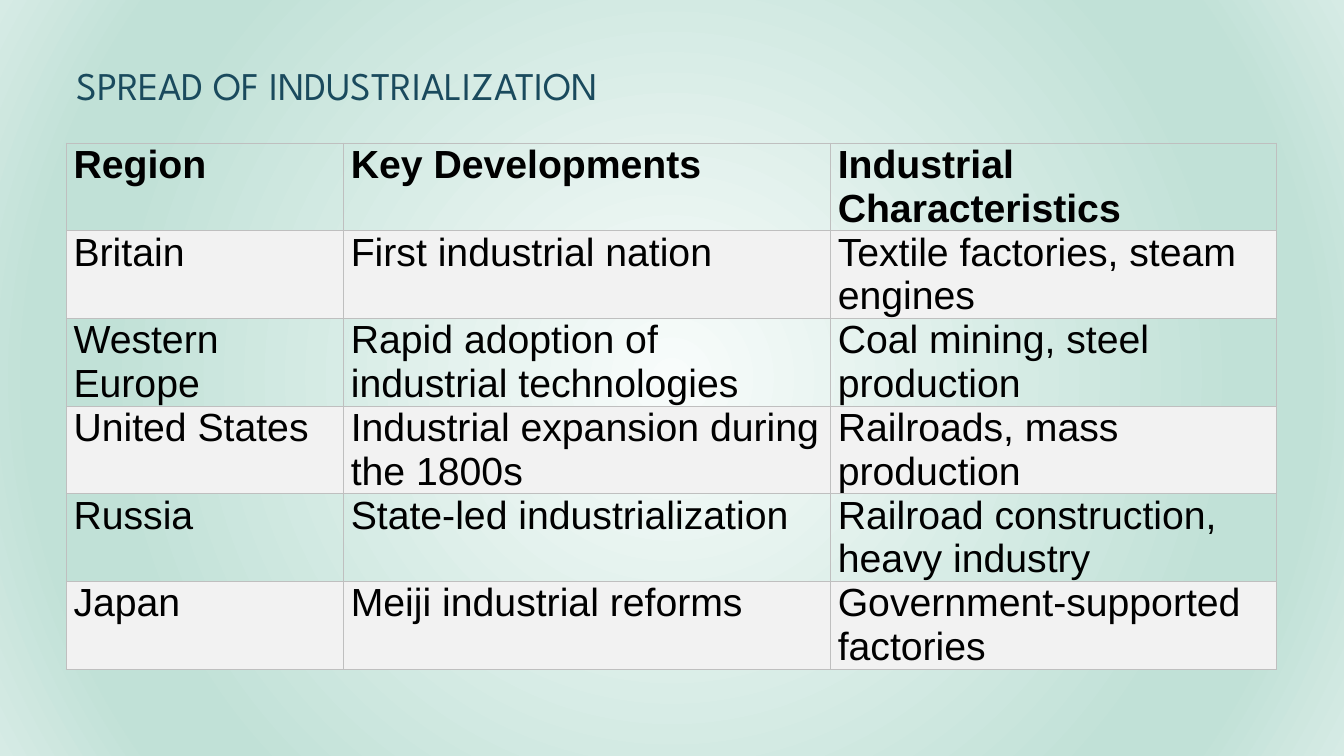
"""Build a slide with a table on the spread of industrialization."""
from pptx import Presentation
from pptx.dml.color import RGBColor
from pptx.enum.text import MSO_ANCHOR, PP_ALIGN
from pptx.oxml import parse_xml
from pptx.oxml.ns import nsdecls, qn
from pptx.util import Inches, Pt

THEME = {
    "title": "1A4A5D", "ink": "000000", "band": "F2F2F2", "rule": "BFBFBF",
    "glow": [(0, "F8FCFB"), (74, "C1E1D7"), (83, "C1E1D7"), (100, "D6EBE5")],
    "title_font": "League Spartan", "body_font": "Arial", "size": 28,
}
LEFT, TABLE_TOP, ROW_HEIGHT = 0.66, 1.42, 0.87
COLUMNS = [2.75, 4.83, 4.42]
REGIONS = [
    ("Region", "Key Developments", "Industrial Characteristics"),
    ("Britain", "First industrial nation", "Textile factories, steam engines"),
    ("Western Europe", "Rapid adoption of industrial technologies", "Coal mining, steel production"),
    ("United States", "Industrial expansion during the 1800s", "Railroads, mass production"),
    ("Russia", "State-led industrialization", "Railroad construction, heavy industry"),
    ("Japan", "Meiji industrial reforms", "Government-supported factories"),
]


def write(frame, text, font, color, bold=False, spacing=1.0):
    paragraph = frame.paragraphs[0]
    paragraph.alignment = PP_ALIGN.LEFT
    paragraph.line_spacing = spacing
    run = paragraph.add_run()
    run.text = text
    run.font.name = font
    run.font.size = Pt(THEME["size"])
    run.font.bold = bold
    run.font.color.rgb = RGBColor.from_string(color)


deck = Presentation()
deck.slide_width, deck.slide_height = Inches(13.33), Inches(7.5)
slide = deck.slides.add_slide(deck.slide_layouts[5])

slide.background.fill.solid()
backdrop = slide.element.find(".//" + qn("p:bgPr"))
stops = "".join(
    f'<a:gs pos="{share * 1000}"><a:srgbClr val="{color}"/></a:gs>' for share, color in THEME["glow"]
)
backdrop.replace(backdrop[0], parse_xml(
    f'<a:gradFill {nsdecls("a")} rotWithShape="1"><a:gsLst>{stops}</a:gsLst><a:path path="circle">'
    '<a:fillToRect l="50000" t="50000" r="50000" b="50000"/></a:path></a:gradFill>'
))

heading = slide.shapes.title
heading.left, heading.top = Inches(LEFT), Inches(0.25)
heading.width, heading.height = Inches(11.67), Inches(0.88)
heading.text_frame.vertical_anchor = MSO_ANCHOR.BOTTOM
write(heading.text_frame, "SPREAD OF INDUSTRIALIZATION",
      font=THEME["title_font"], color=THEME["title"], spacing=0.9)

regions = slide.shapes.add_table(
    len(REGIONS), len(COLUMNS), Inches(LEFT), Inches(TABLE_TOP),
    Inches(sum(COLUMNS)), Inches(ROW_HEIGHT * len(REGIONS)),
).table
regions.first_row = regions.horz_banding = False
for column, width in zip(regions.columns, COLUMNS):
    column.width = Inches(width)

for row, entries in enumerate(REGIONS):
    regions.rows[row].height = Inches(ROW_HEIGHT)
    for column, entry in enumerate(entries):
        cell = regions.cell(row, column)
        cell.margin_left = cell.margin_right = Inches(0.07)
        cell.margin_top = cell.margin_bottom = 0
        write(cell.text_frame, entry, font=THEME["body_font"], color=THEME["ink"], bold=row == 0)
        if row % 2:
            cell.fill.solid()
            cell.fill.fore_color.rgb = RGBColor.from_string(THEME["band"])
        else:
            cell.fill.background()
        properties = cell._tc.get_or_add_tcPr()
        for place, side in enumerate("LRTB"):
            properties.insert(place, parse_xml(
                f'<a:ln{side} {nsdecls("a")} w="{Pt(1)}"><a:solidFill>'
                f'<a:srgbClr val="{THEME["rule"]}"/></a:solidFill></a:ln{side}>'
            ))

deck.save("out.pptx")
